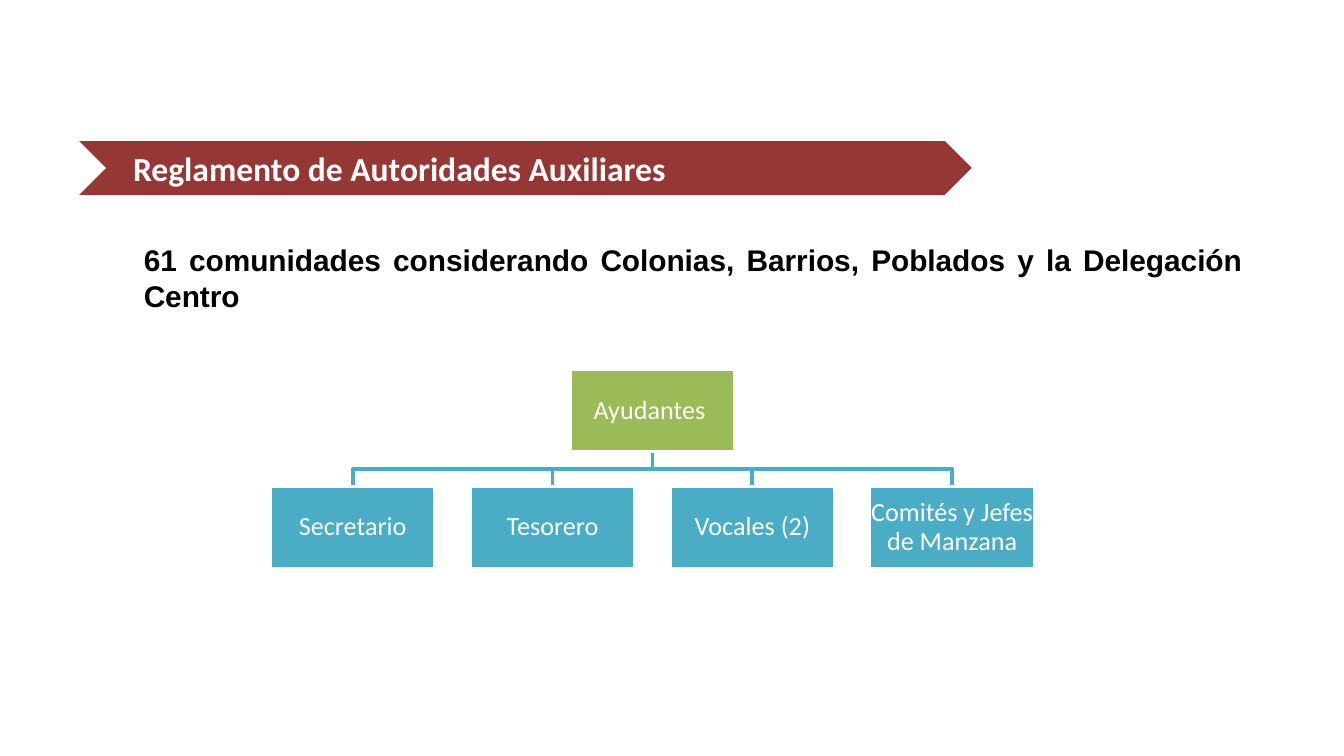
from pptx import Presentation
from pptx.dml.color import RGBColor
from pptx.enum.shapes import MSO_SHAPE
from pptx.enum.text import MSO_ANCHOR, PP_ALIGN
from pptx.util import Inches, Pt

WHITE = "FFFFFF"
TEAL = "4BACC6"
GREEN = "9BBB59"
BOX_WIDTH, BOX_HEIGHT = 1.23, 0.61
FIRST_LEFT, LAST_LEFT = 2.01, 6.47
CHART_CENTER = (FIRST_LEFT + LAST_LEFT + BOX_WIDTH) / 2
HEAD_TOP, MEMBER_TOP = 2.75, 3.62
MEMBERS = ["Secretario", "Tesorero", "Vocales (2)", "Comités y Jefes de Manzana"]


def color(hex_value):
    return RGBColor.from_string(hex_value)


def write_text(shape, text, size, font_name, hex_value, alignment, insets, bold=False):
    frame = shape.text_frame
    frame.word_wrap = True
    frame.margin_left, frame.margin_top, frame.margin_right, frame.margin_bottom = map(Inches, insets)
    paragraph = frame.paragraphs[0]
    paragraph.alignment = alignment
    run = paragraph.add_run()
    run.text = text
    run.font.size = Pt(size)
    run.font.name = font_name
    run.font.bold = bold
    run.font.color.rgb = color(hex_value)
    return frame


def add_filled_shape(slide, preset, left, top, width, height, fill):
    shape = slide.shapes.add_shape(preset, Inches(left), Inches(top), Inches(width), Inches(height))
    shape.shadow.inherit = False
    shape.fill.solid()
    shape.fill.fore_color.rgb = color(fill)
    shape.line.fill.background()
    return shape


def add_banner(slide, text):
    banner = add_filled_shape(slide, MSO_SHAPE.CHEVRON, 0.59, 1.05, 6.64, 0.4, "953735")
    frame = write_text(banner, text, 18, "Calibri", WHITE, PP_ALIGN.LEFT, (0.2, 0.05, 0.1, 0.05), bold=True)
    frame.vertical_anchor = MSO_ANCHOR.TOP


def add_statement(slide, text):
    box = slide.shapes.add_textbox(Inches(1.06), Inches(1.79), Inches(8.19), Inches(0.55))
    write_text(box, text, 16, "Arial", "000000", PP_ALIGN.JUSTIFY, (0.01, 0.01, 0, 0), bold=True)


def add_role(slide, text, center, top, fill):
    box = add_filled_shape(slide, MSO_SHAPE.RECTANGLE, center - BOX_WIDTH / 2, top, BOX_WIDTH, BOX_HEIGHT, fill)
    box.line.color.rgb = color(WHITE)
    box.line.width = Pt(2)
    frame = write_text(box, text, 14, "Calibri", WHITE, PP_ALIGN.CENTER, (0.01,) * 4)
    frame.vertical_anchor = MSO_ANCHOR.MIDDLE
    frame.paragraphs[0].line_spacing = 0.9


def add_branch(slide, center):
    top = HEAD_TOP + BOX_HEIGHT
    middle = (top + MEMBER_TOP) / 2
    corners = [(CHART_CENTER, middle), (center, middle), (center, MEMBER_TOP)]
    builder = slide.shapes.build_freeform(Inches(CHART_CENTER), Inches(top))
    builder.add_line_segments([(Inches(x), Inches(y)) for x, y in corners], close=False)
    branch = builder.convert_to_shape()
    branch.shadow.inherit = False
    branch.fill.background()
    branch.line.color.rgb = color(TEAL)
    branch.line.width = Pt(2)


def add_organization_chart(slide):
    pitch = (LAST_LEFT - FIRST_LEFT) / (len(MEMBERS) - 1)
    centers = [FIRST_LEFT + BOX_WIDTH / 2 + pitch * index for index in range(len(MEMBERS))]
    for center in reversed(centers):
        add_branch(slide, center)
    add_role(slide, "Ayudantes ", CHART_CENTER, HEAD_TOP, GREEN)
    for member, center in zip(MEMBERS, centers):
        add_role(slide, member, center, MEMBER_TOP, TEAL)


def main():
    presentation = Presentation()
    presentation.slide_width = Inches(10)
    presentation.slide_height = presentation.slide_width * 9 // 16
    slide = presentation.slides.add_slide(presentation.slide_layouts[6])
    add_banner(slide, "Reglamento de Autoridades Auxiliares")
    add_statement(slide, "61 comunidades considerando Colonias, Barrios, Poblados y la Delegación Centro")
    add_organization_chart(slide)
    presentation.save("out.pptx")


if __name__ == "__main__":
    main()
